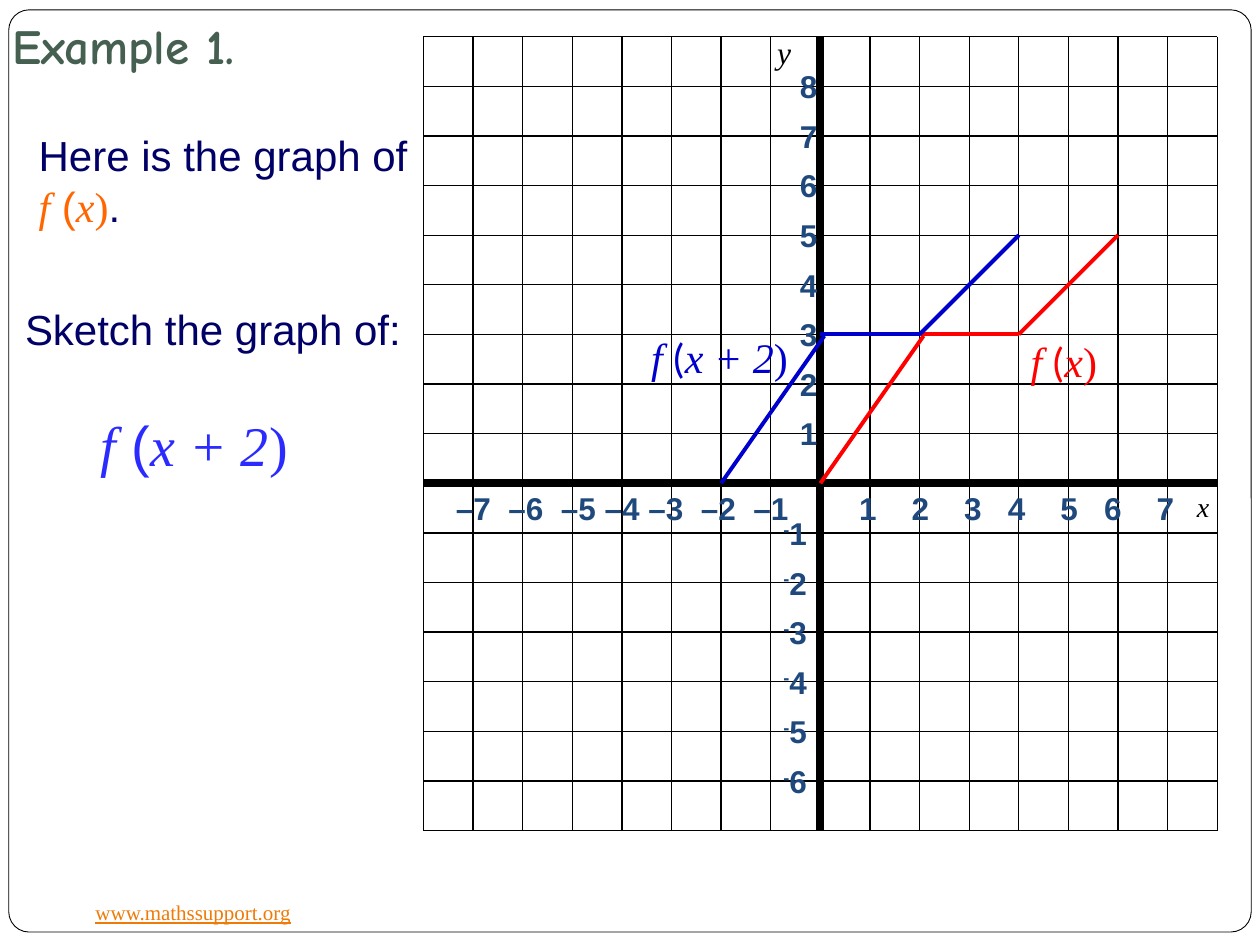
import pptx
import pptx.util
import pptx.dml.color
import pptx.enum.shapes
import pptx.enum.text
import pptx.oxml.ns
import lxml.etree

Pt = pptx.util.Pt
RGB = pptx.dml.color.RGBColor
Shape = pptx.enum.shapes.MSO_SHAPE
Anchor = pptx.enum.text.MSO_ANCHOR
qn = pptx.oxml.ns.qn

WHITE = RGB(0xFF, 0xFF, 0xFF)
BLACK = RGB(0, 0, 0)
GREEN = RGB(0x45, 0x5F, 0x51)
NAVY = RGB(0x01, 0x00, 0x66)
ORANGE = RGB(0xFF, 0x66, 0x00)
AMBER = RGB(0xEE, 0x7B, 0x08)
RED = RGB(0xFF, 0, 0)
BLUE = RGB(0, 0, 0xCC)
BRIGHT = RGB(0x2B, 0x2B, 0xFF)
STEEL = RGB(0x1F, 0x49, 0x7D)
ROMAN = "Times New Roman"

deck = pptx.Presentation()
deck.slide_width, deck.slide_height = Pt(720), Pt(540)
slide = deck.slides.add_slide(deck.slide_layouts[6])
shapes = slide.shapes


def write(area, size, runs, wrap=True):
    frame = area.text_frame
    frame.word_wrap = wrap
    frame.vertical_anchor = Anchor.TOP
    para = frame.paragraphs[0]
    para.alignment = pptx.enum.text.PP_ALIGN.LEFT
    for text, face, color, style in runs:
        run = para.add_run()
        run.text = text
        font = run.font
        font.size, font.name = Pt(size), face
        font.color.rgb = color
        font.bold = "b" in style
        font.italic = "i" in style
        font.underline = "u" in style
        if "^" in style:
            run._r.get_or_add_rPr().set("baseline", "30000")
    return frame


def rule(x1, y1, x2, y2, color, width):
    line = shapes.add_connector(
        pptx.enum.shapes.MSO_CONNECTOR.STRAIGHT, Pt(x1), Pt(y1), Pt(x2), Pt(y2))
    line.line.color.rgb = color
    line.line.width = Pt(width)
    lxml.etree.SubElement(line._element.spPr, qn("a:effectLst"))


edge = shapes.add_shape(Shape.ROUNDED_RECTANGLE, Pt(5), Pt(5.6), Pt(710), Pt(527))
edge.adjustments[0] = 0.022
edge.shadow.inherit = False
edge.fill.solid()
edge.fill.fore_color.rgb = WHITE
edge.line.color.rgb = BLACK
edge.line.width = Pt(0.5)

link = shapes.add_textbox(Pt(47.5), Pt(510.5), Pt(127.4), Pt(21.6))
write(link, 12, [("www.mathssupport.org", ROMAN, AMBER, "u")], False)

title = shapes.add_textbox(Pt(0), Pt(13), Pt(186), Pt(36.7))
frame = write(title, 28, [("Example 1.", "Comic Neue", GREEN, "b")])
frame.vertical_anchor = Anchor.BOTTOM
frame.margin_bottom = Pt(7.2)

task = shapes.add_textbox(Pt(7.2), Pt(170), Pt(231), Pt(36))
write(task, 24, [("Sketch the graph of:", "Arial", NAVY, "")], False)

given = shapes.add_textbox(Pt(15), Pt(70.6), Pt(229.7), Pt(65.5))
write(given, 24, [
    ("Here is the graph of ", "Arial", NAVY, ""),
    ("f", ROMAN, ORANGE, "i"),
    (" (", "Arial", ORANGE, ""),
    ("x", ROMAN, ORANGE, "i"),
    (")", ROMAN, ORANGE, ""),
    (".", "Arial", NAVY, ""),
])

mark = shapes.add_shape(Shape.RECTANGLE, Pt(437), Pt(15.1), Pt(38.2), Pt(39.6))
mark.shadow.inherit = False
mark.fill.solid()
mark.fill.fore_color.rgb = WHITE
mark.line.fill.background()
write(mark, 18, [("y", ROMAN, BLACK, "i")])

LEFT, TOP, STEP, CELLS = 242, 21, 28.35, 16
RIGHT, BASE = LEFT + CELLS * STEP, TOP + CELLS * STEP
ZEROX, ZEROY = LEFT + 8 * STEP, TOP + 9 * STEP

for n in range(CELLS + 1):
    x, y = LEFT + n * STEP, TOP + n * STEP
    rule(x, TOP, x, BASE, BLACK, 0.75)
    rule(LEFT, y, RIGHT, y, BLACK, 0.75)
rule(ZEROX, TOP, ZEROX, BASE, BLACK, 4.5)
rule(LEFT, ZEROY, RIGHT, ZEROY, BLACK, 4.5)

name = shapes.add_textbox(Pt(676.8), Pt(276.5), Pt(21.6), Pt(28.8))
write(name, 16, [("x", ROMAN, BLACK, "i")])

rows = [
    (468.7, 15, "1 2 3 4 5 6 7", (30, 60, 85, 115, 140, 170)),
    (233.3, 20, "–7 –6 –5 –4 –3 –2 –1", (30, 60, 85, 110, 140, 170)),
]
for left, inset, ticks, stops in rows:
    box = shapes.add_textbox(Pt(left), Pt(275.8), Pt(236), Pt(28.8))
    box.text_frame.margin_left = Pt(7.2 + inset)
    props = box.text_frame.paragraphs[0]._p.get_or_add_pPr()
    tabs = lxml.etree.SubElement(props, qn("a:tabLst"))
    for stop in stops:
        lxml.etree.SubElement(tabs, qn("a:tab"), pos=str(Pt(stop)), algn="l")
    write(box, 18, [(ticks.replace(" ", "\t"), "Arial", STEEL, "b")])

for n in range(1, 9):
    box = shapes.add_textbox(Pt(450), Pt(233.3 - (n - 1) * STEP), Pt(39), Pt(28.8))
    write(box, 18, [(str(n), "Arial", STEEL, "b")])
for n in range(1, 7):
    box = shapes.add_textbox(Pt(440.6), Pt(290.2 + (n - 1) * STEP), Pt(39), Pt(28.8))
    write(box, 18, [("-", "Arial", STEEL, "b^"), (str(n), "Arial", STEEL, "b")])

labels = [
    (50.4, 231.1, 122.4, 46, 32, "Arial", "x + 2", BRIGHT),
    (581.8, 187.9, 52.6, 36, 24, "Calibri", "x", RED),
    (365, 185.8, 93.6, 36, 24, "Calibri", "x + 2", BLUE),
]
for x, y, wide, high, size, face, term, color in labels:
    box = shapes.add_textbox(Pt(x), Pt(y), Pt(wide), Pt(high))
    write(box, size, [
        ("f", ROMAN, color, "i"),
        (" (", face, color, ""),
        (term, ROMAN, color, "i"),
        (")", ROMAN, color, ""),
    ], False)

parts = [(0, 0, 2.08, 2.97), (2, 3, 4, 3), (4, 3, 6, 5)]
for shift, color in ((0, RED), (-2, BLUE)):
    for x1, y1, x2, y2 in parts:
        rule(ZEROX + (x1 + shift) * STEP, ZEROY - y1 * STEP,
             ZEROX + (x2 + shift) * STEP, ZEROY - y2 * STEP, color, 2.25)

deck.save("out.pptx")
